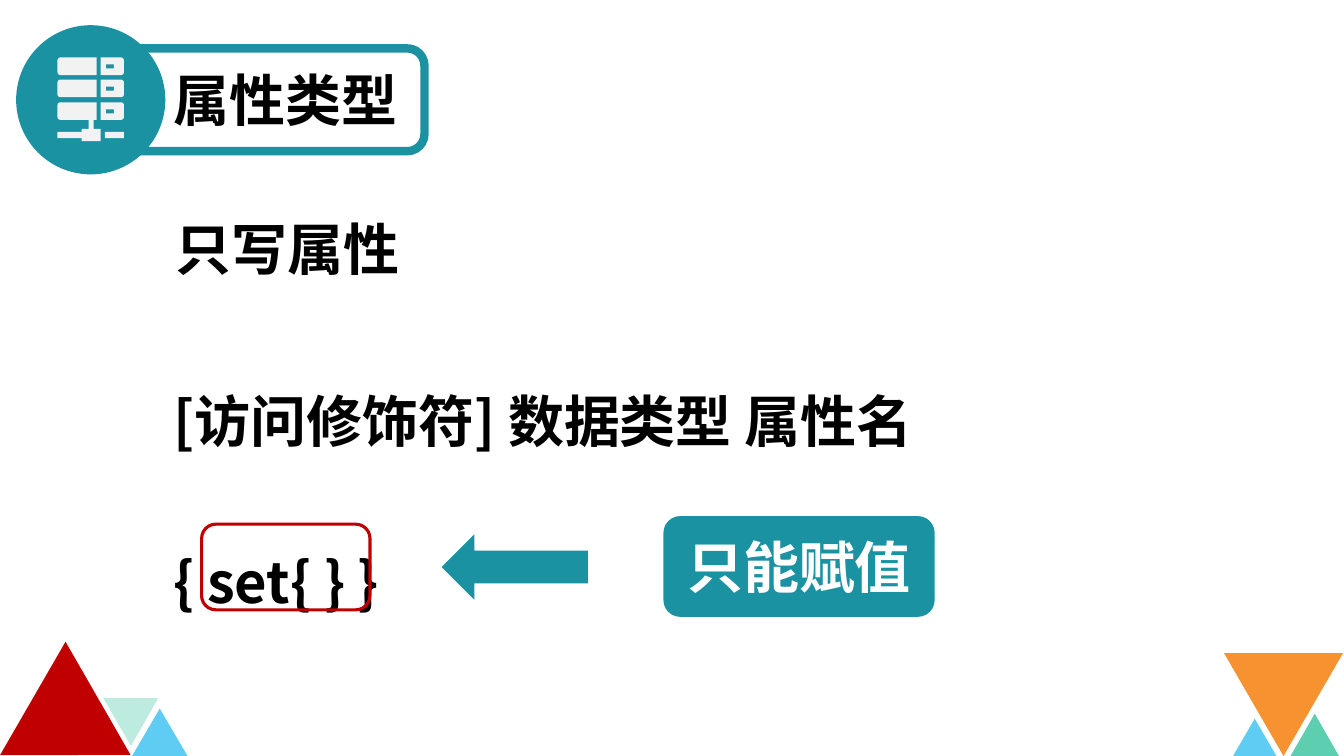
from math import cos, pi, sin

from lxml import etree
from pptx import Presentation
from pptx.dml.color import RGBColor
from pptx.enum.shapes import MSO_SHAPE
from pptx.enum.text import MSO_ANCHOR, MSO_AUTO_SIZE, PP_ALIGN
from pptx.oxml.ns import qn
from pptx.util import Inches, Pt

TRIANGLE = MSO_SHAPE.ISOSCELES_TRIANGLE
ROUNDED = MSO_SHAPE.ROUNDED_RECTANGLE
ELLIPSE = MSO_SHAPE.OVAL
LEFT_ARROW = MSO_SHAPE.LEFT_ARROW
LEFT, CENTER, JUSTIFY = PP_ALIGN.LEFT, PP_ALIGN.CENTER, PP_ALIGN.JUSTIFY

TEAL = RGBColor(0x1A, 0x92, 0xA2)
RED = RGBColor(0xC0, 0x00, 0x00)
SKY = RGBColor(0x5E, 0xCC, 0xF3)
MINT = RGBColor(0xBE, 0xEB, 0xDF)
GREEN = RGBColor(0x5D, 0xCE, 0xAF)
ORANGE = RGBColor(0xF6, 0x92, 0x30)
PALE = RGBColor(0xF2, 0xF2, 0xF2)
BLACK = RGBColor(0x00, 0x00, 0x00)
WHITE = RGBColor(0xFF, 0xFF, 0xFF)

FONT = "Noto Sans CJK SC"
COLUMNS, ROWS = 133.3, 75
CORNER = 0.3


def cells(*counts):
    """Turn counts of grid cells, a tenth of an inch each, into lengths."""
    return [Inches(count / 10) for count in counts]


def paint(shape, fill=None, line=None, weight=0):
    shape.shadow.inherit = False
    if fill is None:
        shape.fill.background()
    else:
        shape.fill.solid()
        shape.fill.fore_color.rgb = fill
    if line is None:
        shape.line.fill.background()
    else:
        shape.line.color.rgb = line
        shape.line.width = Pt(weight)


def add_preset(parent, preset, place, rotation=0, flipped=False, **colours):
    shape = parent.shapes.add_shape(preset, *cells(*place))
    paint(shape, **colours)
    shape.rotation = rotation
    if flipped:
        shape._element.spPr.find(qn("a:xfrm")).set("flipV", "1")
    return shape


def write(frame, lines, colour=BLACK, align=LEFT, spacing=None, hanging=0):
    for index, text in enumerate(lines):
        para = frame.paragraphs[0] if index == 0 else frame.add_paragraph()
        para.alignment = align
        if spacing:
            para.line_spacing = spacing
        if hanging:
            indent = Inches(hanging / 10)
            properties = para._p.get_or_add_pPr()
            properties.set("marL", str(indent))
            properties.set("indent", str(-indent))
        span = para.add_run()
        span.text = text
        span.font.size = Pt(40)
        span.font.bold = True
        span.font.color.rgb = colour
        span.font.name = FONT
        east_asian = etree.SubElement(span._r.get_or_add_rPr(), qn("a:ea"))
        east_asian.set("typeface", FONT)


def add_text(page, place, lines, wrap=False, **style):
    frame = page.shapes.add_textbox(*cells(*place)).text_frame
    frame.word_wrap = wrap
    frame.auto_size = MSO_AUTO_SIZE.SHAPE_TO_FIT_TEXT
    write(frame, lines, **style)


def rounded_corner(x, y, start):
    """Points of a quarter circle around (x, y), clockwise from start."""
    angles = [start + step * pi / 8 for step in range(5)]
    return [(x + CORNER * cos(a), y + CORNER * sin(a)) for a in angles]


def rectangle(left, top, right, bottom):
    return [(left, top), (right, top), (right, bottom), (left, bottom)]


def server_contours():
    left, right = 5.7, 12.3
    split, slot = 9.6, 10
    contours = []
    for top in (5.7, 7.9, 10.15):
        bottom = top + 1.75
        upper, lower = top + CORNER, bottom - CORNER
        disk = (rounded_corner(left + CORNER, lower, pi / 2)
                + rounded_corner(left + CORNER, upper, pi)
                + [(split, top), (split, bottom)])
        panel = ([(slot, bottom), (slot, top)]
                 + rounded_corner(right - CORNER, upper, -pi / 2)
                 + rounded_corner(right - CORNER, lower, 0))
        lamp = rectangle(10.5, top + 0.7, 11.3, top + 1.1)
        contours += [disk, panel, lamp]
    stem = [(9.3, bottom), (9.3, 12.8), (10, 12.8), (10, 14), (8.1, 14),
            (8.1, 13.7), (left, 13.7), (left, 13.1), (8.1, 13.1),
            (8.1, 12.8), (8.8, 12.8), (8.8, bottom)]
    disk_of_last_row = contours[-3]
    disk_of_last_row += stem
    contours.append(rectangle(10.4, 13.1, right, 13.7))
    return contours


def add_server_icon(parent):
    contours = [[cells(*point) for point in contour]
                for contour in server_contours()]
    builder = parent.shapes.build_freeform(*contours[0][0], scale=1.0)
    for index, contour in enumerate(contours):
        if index:
            builder.move_to(*contour[0])
        builder.add_line_segments(contour[1:], close=True)
    paint(builder.convert_to_shape(), fill=PALE)


def add_triangles(page, triangles):
    group = page.shapes.add_group_shape()
    for place, colour, rotation, flipped in triangles:
        add_preset(group, TRIANGLE, place, rotation, flipped, fill=colour)


def main():
    deck = Presentation()
    deck.slide_width, deck.slide_height = cells(COLUMNS, ROWS)
    page = deck.slides.add_slide(deck.slide_layouts[6])

    add_triangles(page, [
        ((13.1, 70.3, 5.5, 4.7), SKY, 0, False),
        ((10.9, 68.1, 5.5, 4.7), MINT, 60, False),
        ((1.6, 66.5, 13, 11.2), RED, 300, True),
    ])
    add_preset(page, ROUNDED, (12.3, 4.8, 29.8, 10.2), line=TEAL, weight=6)
    badge = page.shapes.add_group_shape()
    add_preset(badge, ELLIPSE, (1.6, 2.5, 14.8, 14.8), fill=TEAL)
    add_server_icon(badge)
    add_triangles(page, [
        ((128, 70.8, 4.8, 4.2), GREEN, 0, False),
        ((121.4, 64.8, 11.8, 10.2), ORANGE, 0, True),
        ((122.3, 71.3, 4.3, 3.7), SKY, 0, False),
    ])

    add_text(page, (16.2, 6, 24.2, 7.7), ["属性类型"])
    add_text(page, (16.2, 28.5, 86.6, 33.3),
             ["[访问修饰符] 数据类型 属性名", "{ set{ } }"],
             wrap=True, align=JUSTIFY, spacing=2.4, hanging=5.7)
    add_text(page, (16.4, 20.8, 24.2, 7.7), ["只写属性"], align=CENTER)

    add_preset(page, ROUNDED, (20, 52, 16.7, 8.5), line=RED, weight=2.25)
    add_preset(page, LEFT_ARROW, (43.8, 53, 14.5, 6.5), fill=TEAL)
    callout = add_preset(page, ROUNDED, (65.8, 51.2, 26.9, 10), fill=TEAL)
    callout.text_frame.vertical_anchor = MSO_ANCHOR.MIDDLE
    write(callout.text_frame, ["只能赋值"], colour=WHITE, align=CENTER)

    deck.save("out.pptx")


if __name__ == "__main__":
    main()
